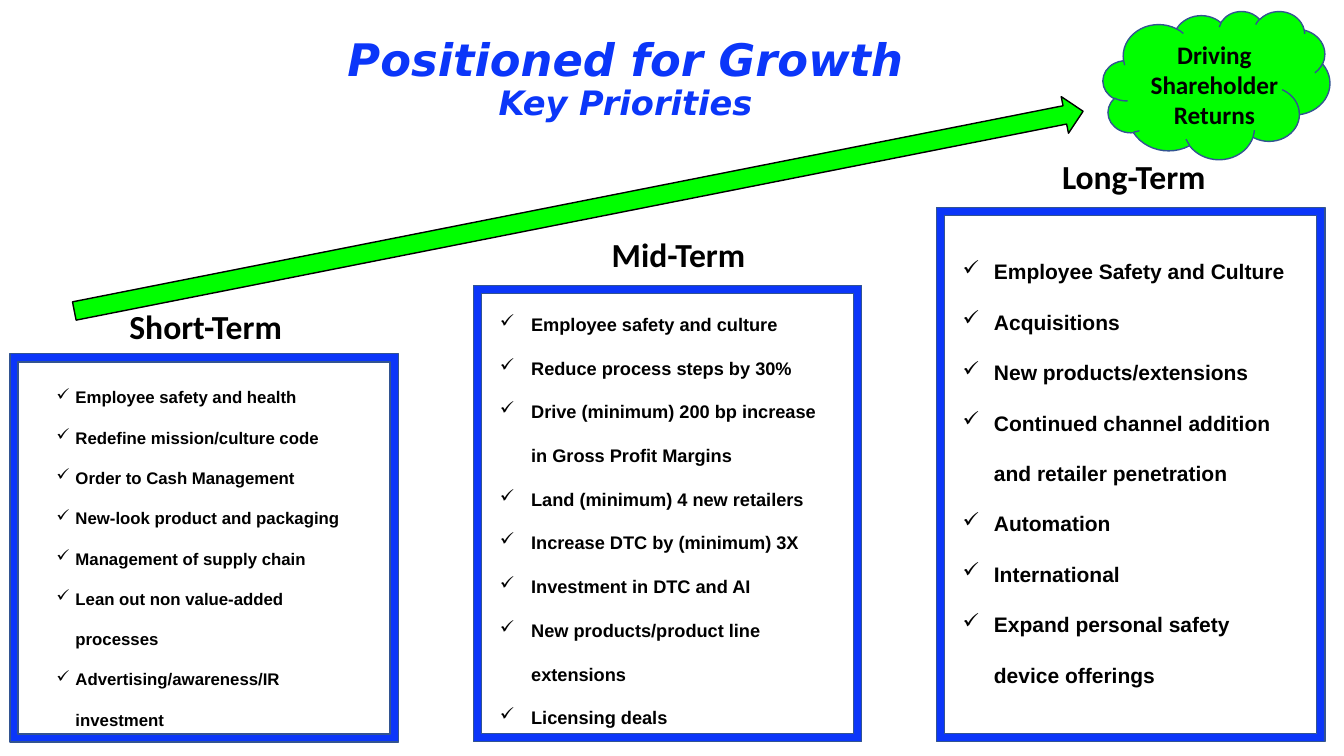
from dataclasses import dataclass

from lxml import etree
from pptx import Presentation
from pptx.dml.color import RGBColor
from pptx.enum.shapes import MSO_SHAPE
from pptx.enum.text import MSO_ANCHOR, MSO_AUTO_SIZE, PP_ALIGN
from pptx.oxml.ns import qn
from pptx.util import Inches, Pt

RECTANGLE, ARROW, CLOUD = MSO_SHAPE.RECTANGLE, MSO_SHAPE.RIGHT_ARROW, MSO_SHAPE.CLOUD
TOP, MIDDLE, BOTTOM = MSO_ANCHOR.TOP, MSO_ANCHOR.MIDDLE, MSO_ANCHOR.BOTTOM
LEFT, CENTER = PP_ALIGN.LEFT, PP_ALIGN.CENTER
NO_AUTOFIT = MSO_AUTO_SIZE.NONE

BLUE = RGBColor(0x0B, 0x36, 0xF9)
EDGE = RGBColor(0x32, 0x54, 0x91)
GREEN = RGBColor(0x00, 0xFF, 0x00)
WHITE = RGBColor(0xFF, 0xFF, 0xFF)
BLACK = RGBColor(0x00, 0x00, 0x00)

# Grid of square cells, ten to the inch
CELL = Inches(0.1)
PANEL_LEFT, PANEL_PITCH, PANEL_WIDTH = 1, 45.95, 38.5
PANEL_BOTTOM = 73.6
FRAME = 0.8
HEADING_HEIGHT = 9.1


@dataclass(frozen=True)
class Box:
    left: float
    top: float
    width: float
    height: float

    def emu(self) -> tuple[int, ...]:
        return tuple(round(n * CELL) for n in (self.left, self.top, self.width, self.height))

    def inset(self, margin: float) -> "Box":
        return Box(self.left + margin, self.top + margin,
                   self.width - 2 * margin, self.height - 2 * margin)


@dataclass(frozen=True)
class Horizon:
    name: str
    panel_top: float
    heading_left: float
    heading_top: float
    heading_width: float
    list_box: Box
    size: int
    indent: float
    priorities: tuple[str, ...]


HORIZONS = (
    Horizon("Short-Term", 35.1, 10.7, 29.9, 19.4, Box(4.6, 35.9, 31.5, 36.7), 12, 1.9, (
        "Employee safety and health",
        "Redefine mission/culture code",
        "Order to Cash Management",
        "New-look product and packaging",
        "Management of supply chain",
        "Lean out non value-added processes",
        "Advertising/awareness/IR investment",
    )),
    Horizon("Mid-Term", 28.3, 58.8, 22.7, 17, Box(48.6, 28.4, 35.2, 44.1), 13, 3.1, (
        "Employee safety and culture",
        "Reduce process steps by 30%",
        "Drive (minimum) 200 bp increase in Gross Profit Margins",
        "Land (minimum) 4 new retailers",
        "Increase DTC by (minimum) 3X",
        "Investment in DTC and AI",
        "New products/product line extensions",
        "Licensing deals",
    )),
    Horizon("Long-Term", 20.6, 104, 15, 16.9, Box(94.5, 22.7, 35.4, 45.7), 15, 3.1, (
        "Employee Safety and Culture",
        "Acquisitions",
        "New products/extensions",
        "Continued channel addition and retailer penetration",
        "Automation",
        "International",
        "Expand personal safety device offerings",
    )),
)


def write(frame, lines: tuple[str, ...], *, sizes: tuple[int, ...], font: str = "Calibri",
          color: RGBColor = BLACK, italic: bool = False, align: PP_ALIGN = CENTER,
          anchor: MSO_ANCHOR = TOP, spacing: float = 1.0, indent: float = 0) -> None:
    """Fill a text frame; the last size applies to all remaining lines."""
    frame.word_wrap = True
    frame.auto_size = NO_AUTOFIT
    frame.vertical_anchor = anchor
    for i, line in enumerate(lines):
        paragraph = frame.paragraphs[0] if i == 0 else frame.add_paragraph()
        paragraph.alignment = align
        paragraph.line_spacing = spacing
        paragraph.space_before = Pt(0)
        run = paragraph.add_run()
        run.text = line
        run.font.name = font
        run.font.size = Pt(sizes[min(i, len(sizes) - 1)])
        run.font.bold = True
        run.font.italic = italic
        run.font.color.rgb = color
        if indent:
            properties = paragraph._p.get_or_add_pPr()
            properties.set("marL", str(round(indent * CELL)))
            properties.set("indent", str(-round(indent * CELL)))
            etree.SubElement(properties, qn("a:buChar")).set("char", "✓")


def add_text(slide, box: Box, lines: tuple[str, ...], **text_format) -> None:
    write(slide.shapes.add_textbox(*box.emu()).text_frame, lines, **text_format)


def add_figure(slide, kind: MSO_SHAPE, box: Box, fill: RGBColor,
               edge: RGBColor = EDGE, rotation: float = 0) -> None:
    figure = slide.shapes.add_shape(kind, *box.emu())
    figure.shadow.inherit = False
    figure.fill.solid()
    figure.fill.fore_color.rgb = fill
    figure.line.color.rgb = edge
    figure.line.width = Pt(1)
    figure.rotation = rotation


def add_horizon(slide, column: int, horizon: Horizon) -> None:
    panel = Box(PANEL_LEFT + column * PANEL_PITCH, horizon.panel_top,
                PANEL_WIDTH, PANEL_BOTTOM - horizon.panel_top)
    add_figure(slide, RECTANGLE, panel, BLUE)
    add_figure(slide, RECTANGLE, panel.inset(FRAME), WHITE)
    heading = Box(horizon.heading_left, horizon.heading_top,
                  horizon.heading_width, HEADING_HEIGHT)
    add_text(slide, heading, (horizon.name,), sizes=(24,))
    add_text(slide, horizon.list_box, horizon.priorities, sizes=(horizon.size,),
             font="Arial", align=LEFT, spacing=2.0, indent=horizon.indent)


def main() -> None:
    deck = Presentation()
    deck.slide_width, deck.slide_height = Inches(13.33), Inches(7.5)
    slide = deck.slides.add_slide(deck.slide_layouts[5])

    # Title
    title = slide.shapes.title
    title.left, title.top, title.width, title.height = Box(24.3, 5.4, 75.5, 7.3).emu()
    write(title.text_frame, ("Positioned for Growth", "Key Priorities"), sizes=(32, 24),
          font="DejaVu Sans", color=BLUE, italic=True, anchor=BOTTOM, spacing=0.9)

    # Panels of priorities, rising from left to right
    for column, horizon in enumerate(HORIZONS):
        add_horizon(slide, column, horizon)

    # Growth arrow and its goal
    add_figure(slide, ARROW, Box(6.4, 19.1, 102, 3.7), GREEN, BLACK, rotation=348.8)
    add_figure(slide, CLOUD, Box(109.4, 1.1, 22.5, 14.7), GREEN)
    add_text(slide, Box(112.5, 3.3, 15.9, 10.1), ("Driving Shareholder", "Returns"),
             sizes=(18,), anchor=MIDDLE)

    deck.save("out.pptx")


if __name__ == "__main__":
    main()
